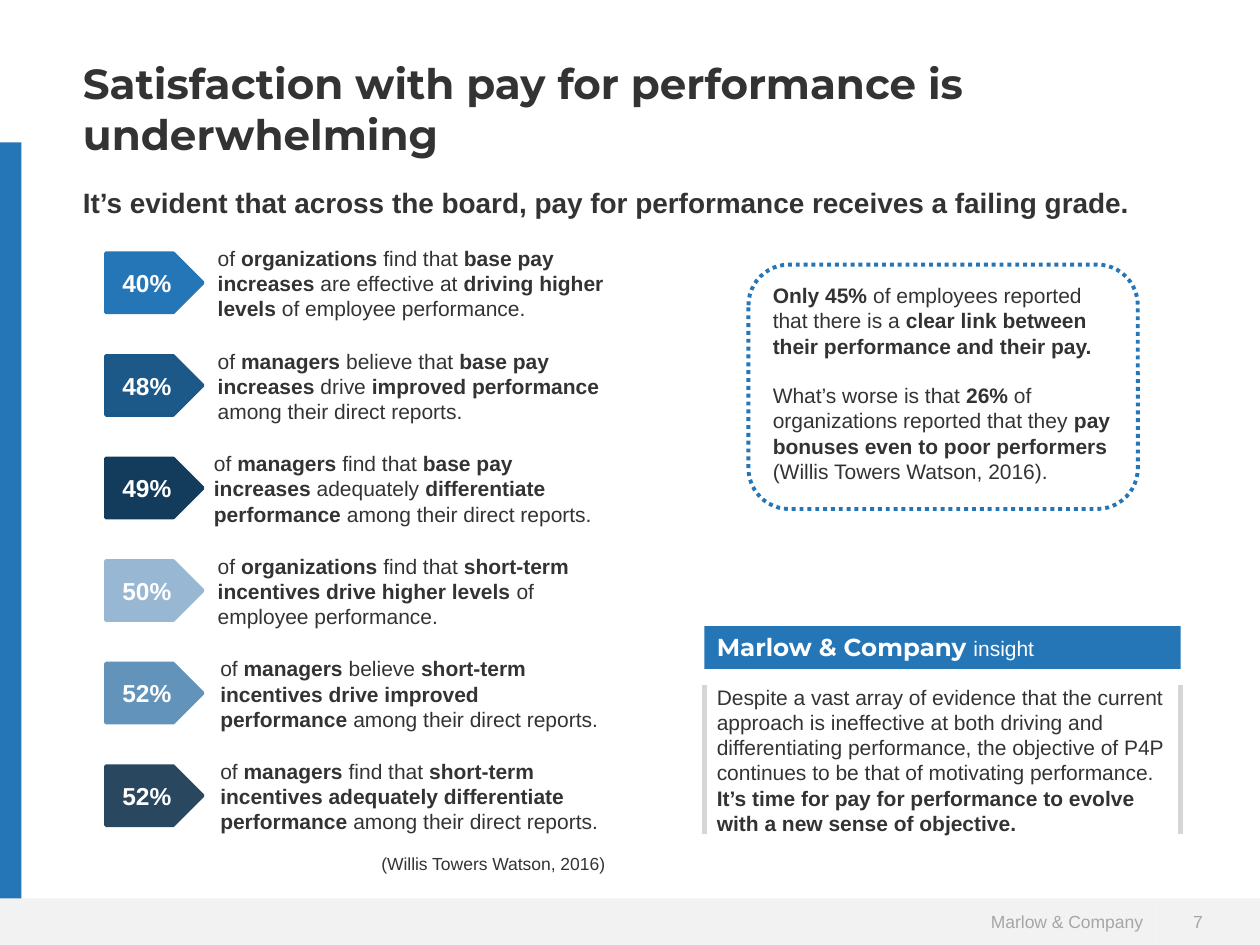
from pptx import Presentation
from pptx.dml.color import RGBColor
from pptx.enum.dml import MSO_LINE
from pptx.enum.shapes import MSO_SHAPE as Shape
from pptx.enum.text import MSO_ANCHOR as Anchor, PP_ALIGN as Align
from pptx.util import Inches, Pt

WIDTH, HEIGHT = 10, 7.5
COLORS = {"blue": "2576B7", "ink": "333333", "white": "FFFFFF",
          "footer": "F2F2F2", "footer_text": "A6A6A6", "bracket": "D6D6D6"}
BODY, HEADING = "Arial", "Montserrat"

# Content: text between asterisks is bold
COMPANY = "Marlow & Company"
TITLE = "*Satisfaction with pay for performance is underwhelming*"
SUBTITLE = ("*It’s evident that across the board, pay for performance "
            "receives a failing grade.*")
# share, tag fill, tag line, left edge of the finding, finding
FINDINGS = [
    ("40%", "2576B7", "2576B7", 1.63,
     "of *organizations* find that *base pay increases *are effective at "
     "*driving higher levels *of employee performance."),
    ("48%", "1C5989", "1B5787", 1.63,
     "of *managers* believe that *base pay increases* drive "
     "*improved performance *among their direct reports."),
    ("49%", "133B5C", "133B5C", 1.6,
     "of *managers* find that *base pay increases *adequately "
     "*differentiate performance* among their direct reports."),
    ("50%", "97B7D2", "97B7D2", 1.63,
     "of *organizations* find that *short-term incentives drive higher "
     "levels *of employee performance."),
    ("52%", "6294BB", "6294BB", 1.65,
     "of *managers* believe *short-term incentives drive improved "
     "performance *among their direct reports."),
    ("52%", "29475F", "29475F", 1.65,
     "of *managers* find that *short-term incentives adequately "
     "differentiate performance *among their direct reports."),
]
SOURCE = "(Willis Towers Watson, 2016)"
CALLOUT = [
    "*Only 45% *of employees reported that there is a *clear link between "
    "their performance and their pay.*",
    "What’s worse is that *26%* of organizations reported that they "
    "*pay bonuses even to poor performers *(Willis Towers Watson, 2016).",
]
INSIGHT = ("Despite a vast array of evidence that the current approach is "
           "ineffective at both driving and differentiating performance, the "
           "objective of P4P continues to be that of motivating performance. "
           "*It’s time for pay for performance to evolve with a new sense of "
           "objective.*")

# Layout
MARGIN = 0.56
FOOTER_TOP, FOOTER_SPLIT = 7.13, 9.17
BAR_TOP, BAR_WIDTH = 1.13, 0.17
TAG_LEFT, TAG_TOP, TAG_WIDTH, TAG_HEIGHT = 0.84, 2.01, 0.77, 0.47
ROW_PITCH = 0.814
FINDING_RISE, FINDING_WIDTH, FINDING_HEIGHT = 0.11, 3.3, 0.71
INSIGHT_LEFT, INSIGHT_WIDTH = 5.59, 3.78


def rgb(value):
    return RGBColor.from_string(COLORS.get(value, value))


def add_run(paragraph, text, size, color, bold=False, font=BODY):
    run = paragraph.add_run()
    run.text = text
    run.font.size, run.font.name, run.font.bold = Pt(size), font, bold
    run.font.color.rgb = rgb(color)


def write(part, paragraphs, size, color="ink", font=BODY, align=Align.LEFT,
          anchor=Anchor.TOP, gap=0):
    frame = part.text_frame
    frame.word_wrap, frame.vertical_anchor = True, anchor
    for i, marked in enumerate(paragraphs):
        paragraph = frame.add_paragraph() if i else frame.paragraphs[0]
        paragraph.alignment = align
        if i:
            paragraph.space_before = Pt(gap)
        for j, text in enumerate(marked.split("*")):
            if text:
                add_run(paragraph, text, size, color, j % 2 == 1, font)
    return frame


def add_box(left, top, width, height):
    return slide.shapes.add_textbox(*map(Inches, (left, top, width, height)))


def add_part(kind, left, top, width, height, fill=None, line=None, weight=2):
    part = slide.shapes.add_shape(kind, *map(Inches, (left, top, width, height)))
    part.shadow.inherit = False
    if fill:
        part.fill.solid()
        part.fill.fore_color.rgb = rgb(fill)
    else:
        part.fill.background()
    if line:
        part.line.color.rgb = rgb(line)
        part.line.width = Pt(weight)
    else:
        part.line.fill.background()
    return part


deck = Presentation()
deck.slide_width, deck.slide_height = Inches(WIDTH), Inches(HEIGHT)
slide = deck.slides.add_slide(deck.slide_layouts[6])

# Footer
footer_height = HEIGHT - FOOTER_TOP
footer = add_part(Shape.RECTANGLE, 0, FOOTER_TOP, FOOTER_SPLIT, footer_height, "footer")
write(footer, [COMPANY], 10, "footer_text", align=Align.RIGHT, anchor=Anchor.MIDDLE)
page = add_part(Shape.RECTANGLE, FOOTER_SPLIT, FOOTER_TOP, WIDTH - FOOTER_SPLIT,
                footer_height, "footer")
write(page, ["7"], 10, "footer_text", anchor=Anchor.MIDDLE).margin_left = Inches(0.3)

# Heading and side bar
write(add_box(MARGIN, 0.41, 8.89, 0.94), [TITLE], 24, font=HEADING)
add_part(Shape.RECTANGLE, 0, BAR_TOP, BAR_WIDTH, FOOTER_TOP - BAR_TOP, "blue")
write(add_box(MARGIN, 1.42, 8.81, 0.37), [SUBTITLE], 16)

# Findings
for row, (share, fill, line, left, finding) in enumerate(FINDINGS):
    top = TAG_TOP + row * ROW_PITCH
    tag = add_part(Shape.PENTAGON, TAG_LEFT, top, TAG_WIDTH, TAG_HEIGHT, fill, line)
    write(tag, [f"*{share}*"], 14, "white", align=Align.CENTER, anchor=Anchor.MIDDLE)
    write(add_box(left, top - FINDING_RISE, FINDING_WIDTH, FINDING_HEIGHT), [finding], 12)
write(add_box(1.16, 6.72, 3.74, 0.27), [SOURCE], 10, align=Align.RIGHT)

# Callout
callout = add_part(Shape.ROUNDED_RECTANGLE, 5.94, 2.1, 3.09, 1.94, "white", "blue", 2.25)
callout.line.dash_style = MSO_LINE.ROUND_DOT
write(callout, CALLOUT, 12, gap=14)

# Insight
banner = add_part(Shape.RECTANGLE, INSIGHT_LEFT, 4.97, INSIGHT_WIDTH, 0.34, "blue")
banner_frame = write(banner, [f"*{COMPANY} *"], 14, "white", HEADING)
add_run(banner_frame.paragraphs[0], "insight", 12, "white")
bracket = add_part(Shape.DOUBLE_BRACKET, INSIGHT_LEFT, 5.44, INSIGHT_WIDTH, 1.18,
                   line="bracket", weight=2.5)
bracket.adjustments[0] = 0
write(bracket, [INSIGHT], 12, anchor=Anchor.MIDDLE)

deck.save("out.pptx")
